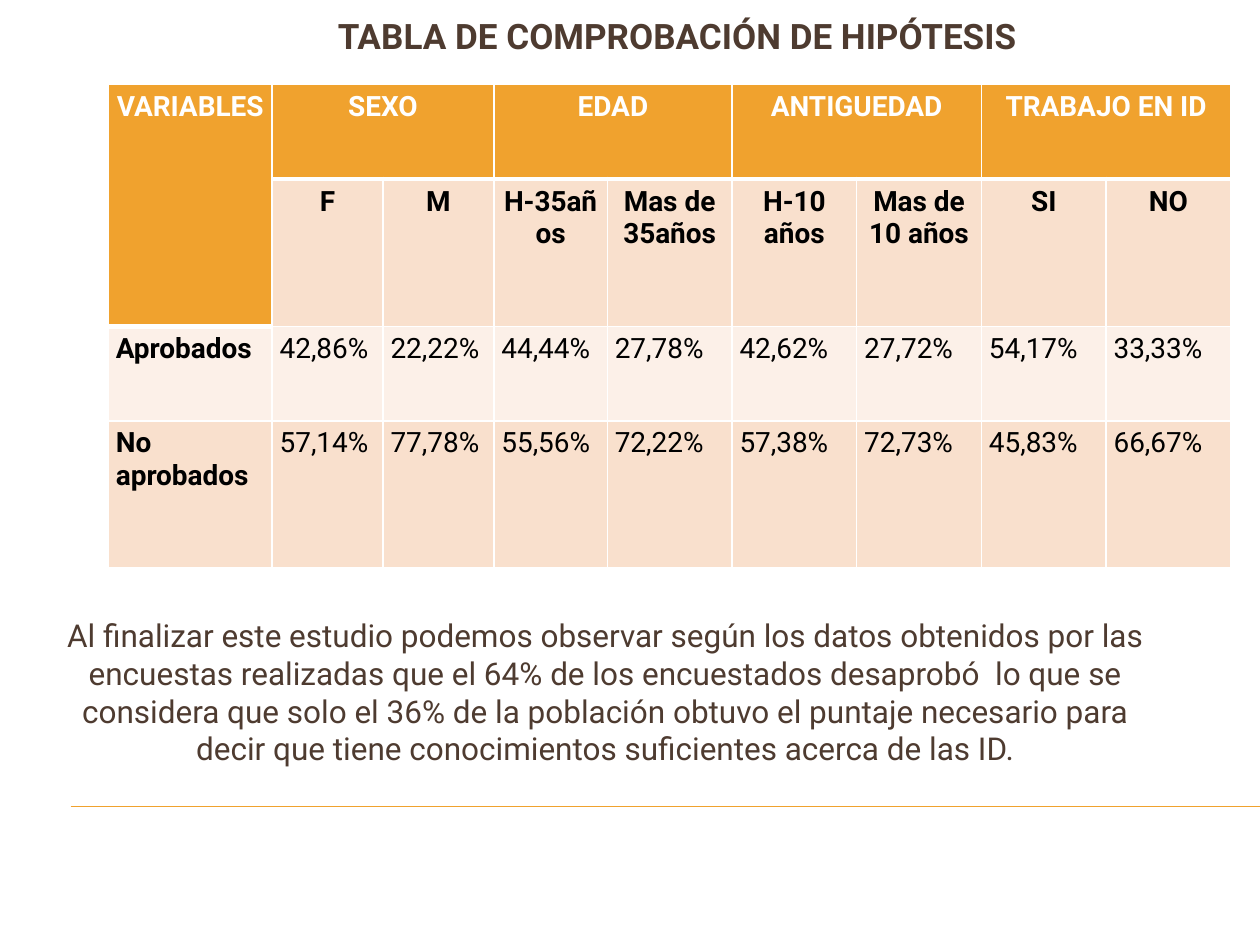
"""Build the hypothesis testing table slide."""
from dataclasses import dataclass

import pptx
import pptx.dml.color
import pptx.enum.shapes
import pptx.enum.text
import pptx.oxml.ns
import pptx.util
from lxml import etree

Inches = pptx.util.Inches
RGBColor = pptx.dml.color.RGBColor
Align = pptx.enum.text.PP_ALIGN
Anchor = pptx.enum.text.MSO_ANCHOR
qn = pptx.oxml.ns.qn

FONT = "Roboto"
ORANGE = RGBColor(0xF0, 0xA2, 0x2E)
BROWN = RGBColor(0x4E, 0x3B, 0x30)
PEACH = RGBColor(0xF9, 0xE0, 0xCD)
CREAM = RGBColor(0xFC, 0xF0, 0xE8)
WHITE = RGBColor(0xFF, 0xFF, 0xFF)
BLACK = RGBColor(0, 0, 0)


@dataclass(frozen=True)
class TextStyle:
    size: int
    color: RGBColor
    bold: bool = False
    align: Align = Align.CENTER


@dataclass(frozen=True)
class CellStyle:
    text: TextStyle
    fill: RGBColor
    bottom: float = 1


@dataclass(frozen=True)
class TextBlock:
    left: float
    top: float
    width: float
    height: float
    text: str
    style: TextStyle
    anchor: Anchor


HEADER = CellStyle(TextStyle(16, WHITE, True), ORANGE, 3)
SUBHEADER = CellStyle(TextStyle(16, BLACK, True), PEACH)
LABEL = TextStyle(16, BLACK, True, Align.LEFT)
VALUE = TextStyle(16, BLACK, False, Align.LEFT)

COLUMN_WIDTHS = [1.3, 0.88, 0.88, 0.9] + [0.99] * 5
ROW_HEIGHTS = [0.75, 1.17] * 2
GROUPS = ["SEXO", "EDAD", "ANTIGUEDAD", "TRABAJO EN ID"]
CATEGORIES = ["F", "M", "H-35años", "Mas de 35años", "H-10 años", "Mas de 10 años", "SI", "NO"]
RESULTS = [
    (CREAM, "Aprobados",
     ["42,86%", "22,22%", "44,44%", "27,78%", "42,62%", "27,72%", "54,17%", "33,33%"]),
    (PEACH, "No aprobados",
     ["57,14%", "77,78%", "55,56%", "72,22%", "57,38%", "72,73%", "45,83%", "66,67%"]),
]
BLOCKS = [
    TextBlock(0.75, 0, 9.25, 0.57, "TABLA DE COMPROBACIÓN DE HIPÓTESIS",
              TextStyle(20, BROWN, True), Anchor.MIDDLE),
    TextBlock(0.39, 4.84, 8.83, 1.07,
              "Al finalizar este estudio podemos observar según los datos obtenidos por las "
              "encuestas realizadas que el 64% de los encuestados desaprobó  lo que se "
              "considera que solo el 36% de la población obtuvo el puntaje necesario para "
              "decir que tiene conocimientos suficientes acerca de las ID.",
              TextStyle(18, BROWN), Anchor.TOP),
]


def write_text(text_frame, text: str, style: TextStyle) -> None:
    text_frame.word_wrap = True
    paragraph = text_frame.paragraphs[0]
    paragraph.alignment = style.align
    run = paragraph.add_run()
    run.text = text
    run.font.name = FONT
    run.font.size = pptx.util.Pt(style.size)
    run.font.bold = style.bold
    run.font.color.rgb = style.color


def add_text_block(slide, block: TextBlock) -> None:
    shape = slide.shapes.add_textbox(Inches(block.left), Inches(block.top),
                                     Inches(block.width), Inches(block.height))
    shape.text_frame.vertical_anchor = block.anchor
    write_text(shape.text_frame, block.text, block.style)


def add_borders(cell, bottom: float) -> None:
    properties = cell._tc.get_or_add_tcPr()
    for side, width in (("L", 1), ("R", 1), ("T", 1), ("B", bottom)):
        line = etree.SubElement(properties, qn(f"a:ln{side}"), w=str(pptx.util.Pt(width)))
        fill = etree.SubElement(line, qn("a:solidFill"))
        etree.SubElement(fill, qn("a:srgbClr"), val=str(WHITE))


def format_cell(cell, style: CellStyle, text: str = "") -> None:
    add_borders(cell, style.bottom)
    cell.fill.solid()
    cell.fill.fore_color.rgb = style.fill
    cell.margin_left = cell.margin_right = Inches(0.06)
    cell.margin_top = cell.margin_bottom = Inches(0.05)
    if text:
        write_text(cell.text_frame, text, style.text)


def add_results_table(slide) -> None:
    table = slide.shapes.add_table(
        len(ROW_HEIGHTS), len(COLUMN_WIDTHS), Inches(0.86), Inches(0.67),
        Inches(sum(COLUMN_WIDTHS)), Inches(sum(ROW_HEIGHTS))).table
    for column, width in zip(table.columns, COLUMN_WIDTHS):
        column.width = Inches(width)
    for row, height in zip(table.rows, ROW_HEIGHTS):
        row.height = Inches(height)

    table.cell(0, 0).merge(table.cell(1, 0))
    format_cell(table.cell(0, 0), HEADER, "VARIABLES")
    format_cell(table.cell(1, 0), HEADER)
    for index, group in enumerate(GROUPS):
        first, second = table.cell(0, 2 * index + 1), table.cell(0, 2 * index + 2)
        first.merge(second)
        format_cell(first, HEADER, group)
        format_cell(second, HEADER)
    for column, category in enumerate(CATEGORIES, 1):
        format_cell(table.cell(1, column), SUBHEADER, category)
    for row, (fill, label, values) in enumerate(RESULTS, 2):
        format_cell(table.cell(row, 0), CellStyle(LABEL, fill), label)
        for column, value in enumerate(values, 1):
            format_cell(table.cell(row, column), CellStyle(VALUE, fill), value)


def add_rule(slide) -> None:
    connector = slide.shapes.add_connector(
        pptx.enum.shapes.MSO_CONNECTOR.STRAIGHT,
        Inches(0.56), Inches(6.4), Inches(10), Inches(6.4))
    connector.line.color.rgb = ORANGE
    connector.line.width = pptx.util.Pt(0.75)
    etree.SubElement(connector._element.spPr, qn("a:effectLst"))


def main() -> None:
    presentation = pptx.Presentation()
    presentation.slide_width = Inches(10)
    presentation.slide_height = Inches(7.5)
    slide = presentation.slides.add_slide(presentation.slide_layouts[6])
    add_rule(slide)
    for block in BLOCKS:
        add_text_block(slide, block)
    add_results_table(slide)
    presentation.save("out.pptx")


if __name__ == "__main__":
    main()
